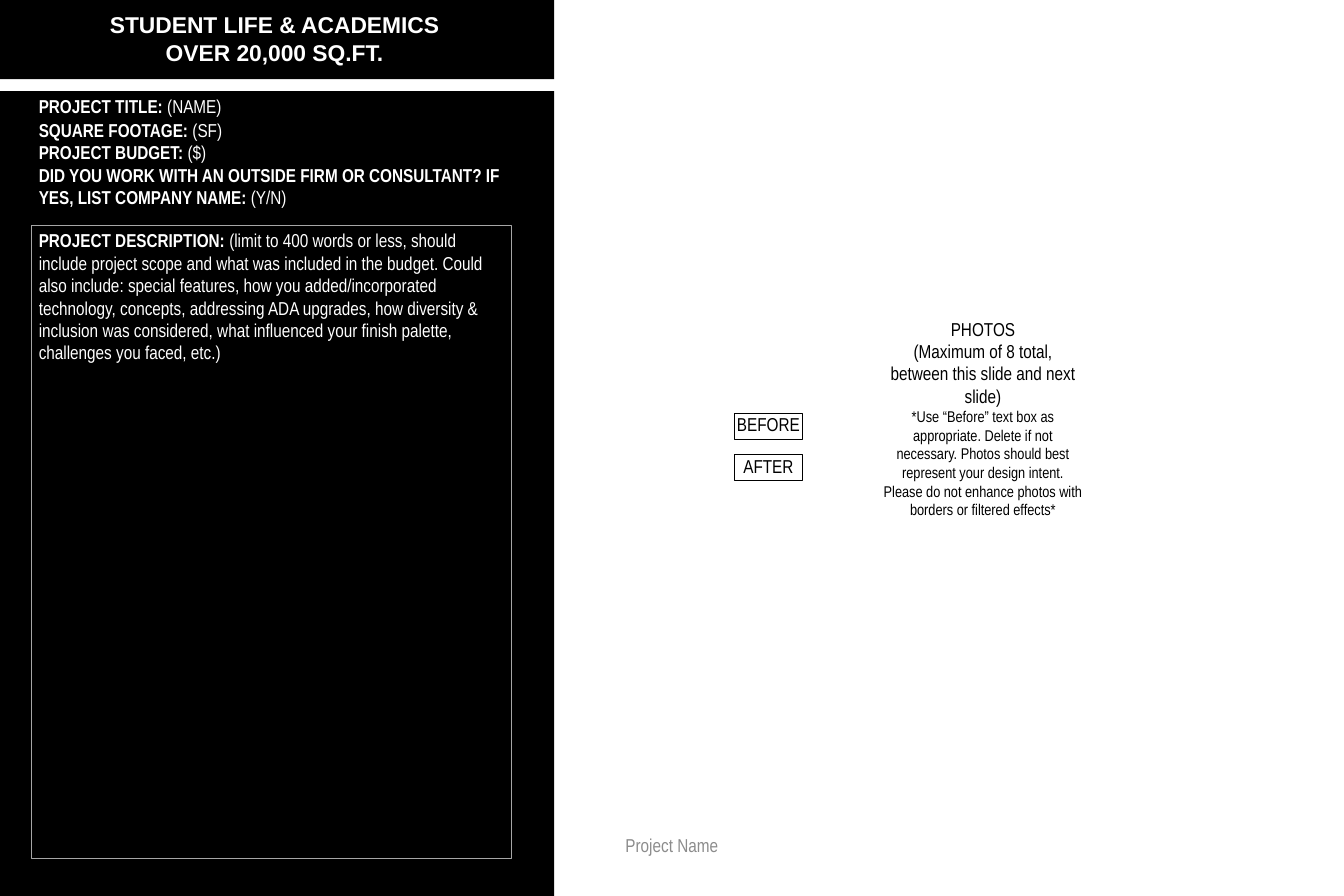
import pptx
import pptx.util
import pptx.dml.color
import pptx.enum.shapes
import pptx.enum.text

Cm, Pt = pptx.util.Cm, pptx.util.Pt
ALIGN = pptx.enum.text.PP_ALIGN
BLACK, WHITE, GREY, OUTLINE = "000000", "FFFFFF", "8C8C8C", "A6A6A6"


def paint(color_format, hex_string):
    color_format.rgb = pptx.dml.color.RGBColor.from_string(hex_string)


def write(shape, lines, color, align, inset=(0, 0), font="Arial Narrow"):
    """Fill a shape with lines of (bold text, plain text, size)."""
    frame = shape.text_frame
    frame.word_wrap = True
    frame.vertical_anchor = pptx.enum.text.MSO_ANCHOR.TOP
    frame.margin_left = frame.margin_right = Cm(inset[0])
    frame.margin_top = frame.margin_bottom = Cm(inset[1])
    for number, (label, entry, size) in enumerate(lines):
        paragraph = frame.add_paragraph() if number else frame.paragraphs[0]
        paragraph.alignment = align
        for words, bold in ((label, True), (entry, False)):
            if words:
                run = paragraph.add_run()
                run.text = words
                run.font.name, run.font.size, run.font.bold = font, Pt(size), bold
                paint(run.font.color, color)


deck = pptx.Presentation()
deck.slide_width, deck.slide_height = Cm(45.72), Cm(30.48)
shapes = deck.slides.add_slide(deck.slide_layouts[6]).shapes
RECTANGLE = pptx.enum.shapes.MSO_SHAPE.RECTANGLE
PADDING = (0.25, 0.13)

# Black header band and side panel
for top, height in ((-0.03, 2.72), (3.1, 27.38)):
    band = shapes.add_shape(RECTANGLE, 0, Cm(top), Cm(18.85), Cm(height))
    band.shadow.inherit = False
    band.fill.solid()
    paint(band.fill.fore_color, BLACK)
    band.line.fill.background()

# Category heading
heading = shapes.add_textbox(Cm(0.64), Cm(0.25), Cm(17.4), Cm(2.13))
write(heading, [("STUDENT LIFE & ACADEMICS", "", 22), ("OVER 20,000 SQ.FT.", "", 22)],
      WHITE, ALIGN.CENTER, PADDING, "Arial")

# Project facts
project_title = shapes.add_textbox(Cm(1.07), Cm(3.1), Cm(16.31), Cm(0.8))
write(project_title, [("PROJECT TITLE: ", "(NAME)", 18)], WHITE, ALIGN.LEFT, PADDING)

project_facts = shapes.add_textbox(Cm(1.07), Cm(3.91), Cm(16.31), Cm(3.33))
write(project_facts, [
    ("SQUARE FOOTAGE: ", "(SF)", 18),
    ("PROJECT BUDGET: ", "($)", 18),
    ("DID YOU WORK WITH AN OUTSIDE FIRM OR CONSULTANT? IF YES, LIST COMPANY NAME: ",
     "(Y/N)", 18),
], WHITE, ALIGN.LEFT, PADDING)

# Outlined boxes: project description and photo labels
description = ("(limit to 400 words or less, should include project scope and what was "
               "included in the budget. Could also include: special features, how you "
               "added/incorporated technology, concepts, addressing ADA upgrades, how "
               "diversity & inclusion was considered, what influenced your finish "
               "palette, challenges you faced, etc.)")
outlined_boxes = [
    ((1.07, 7.67, 16.31, 21.51), OUTLINE, 0.25,
     ("PROJECT DESCRIPTION: ", description, 18), WHITE, ALIGN.LEFT, PADDING),
    ((24.97, 14.05, 2.34, 0.89), BLACK, 0.75,
     ("", "BEFORE", 18), BLACK, ALIGN.CENTER, (0, 0)),
    ((24.97, 15.47, 2.34, 0.89), BLACK, 0.75,
     ("", "AFTER", 18), BLACK, ALIGN.CENTER, (0, 0)),
]
for place, line_color, line_width, words, text_color, align, inset in outlined_boxes:
    box = shapes.add_shape(RECTANGLE, *map(Cm, place))
    box.shadow.inherit = False
    box.fill.background()
    paint(box.line.color, line_color)
    box.line.width = Pt(line_width)
    write(box, [words], text_color, align, inset)

# Photo instructions
photo_notes = shapes.add_textbox(Cm(30.05), Cm(10.8), Cm(6.78), Cm(7.42))
write(photo_notes, [
    ("", "PHOTOS", 18),
    ("", "(Maximum of 8 total, between this slide and next slide)", 18),
    ("", "*Use “Before” text box as appropriate. Delete if not necessary. Photos "
         "should best represent your design intent. Please do not enhance photos "
         "with borders or filtered effects*", 15),
], BLACK, ALIGN.CENTER)

# Footer
project_name = shapes.add_textbox(Cm(15.54), Cm(28.35), Cm(14.63), Cm(1.52))
write(project_name, [("", "Project Name", 18)], GREY, ALIGN.CENTER)

deck.save("out.pptx")
